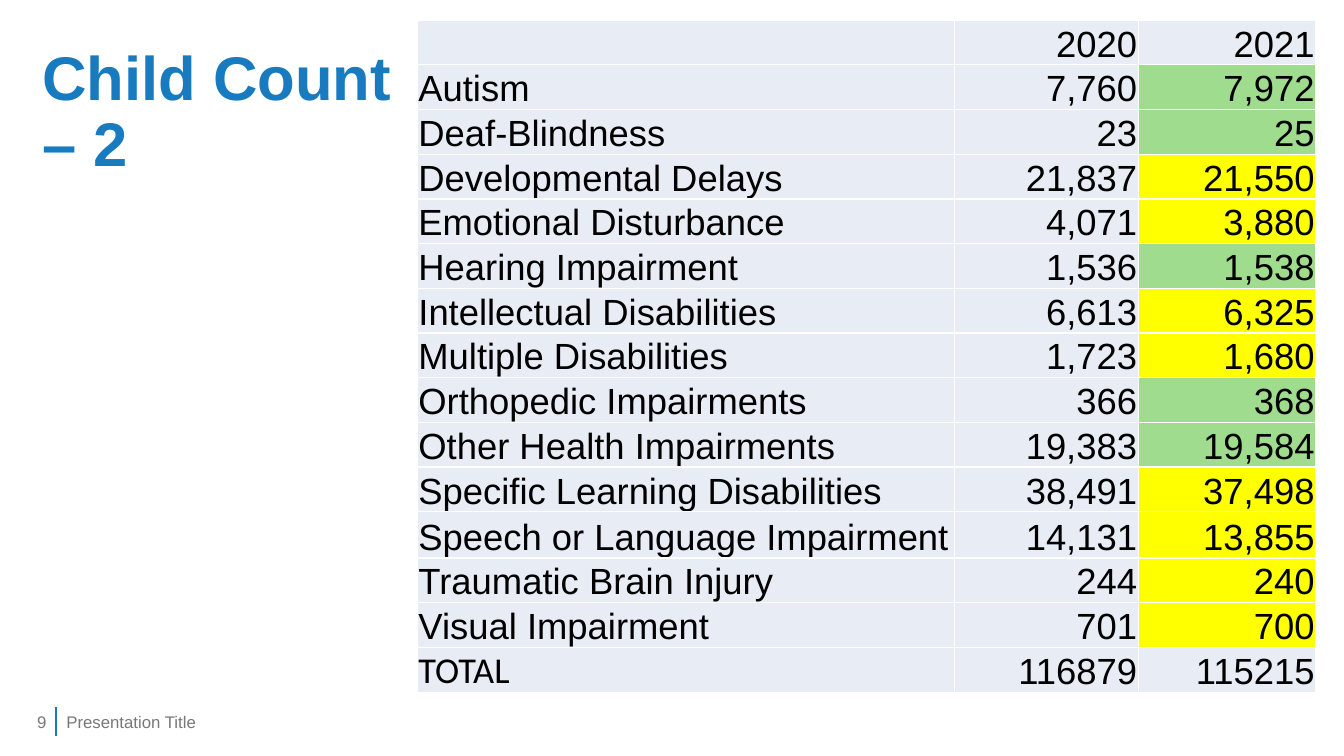
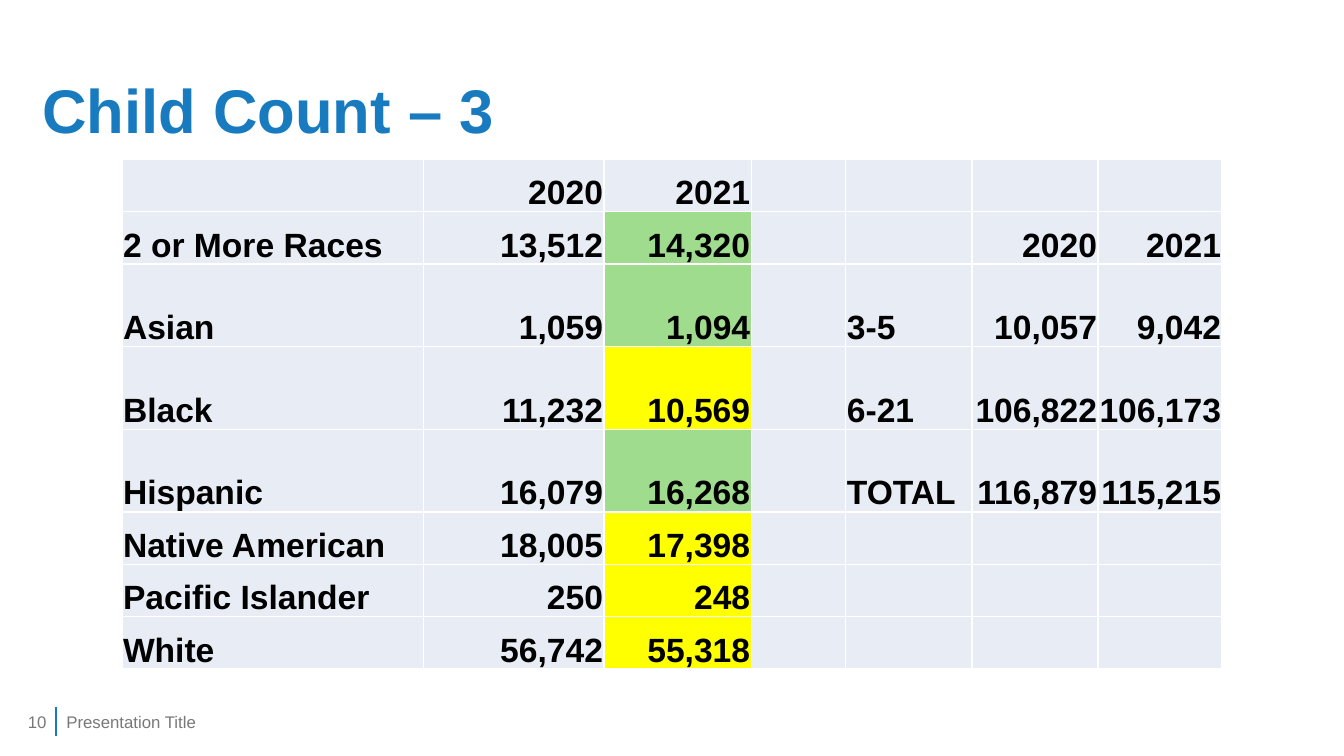
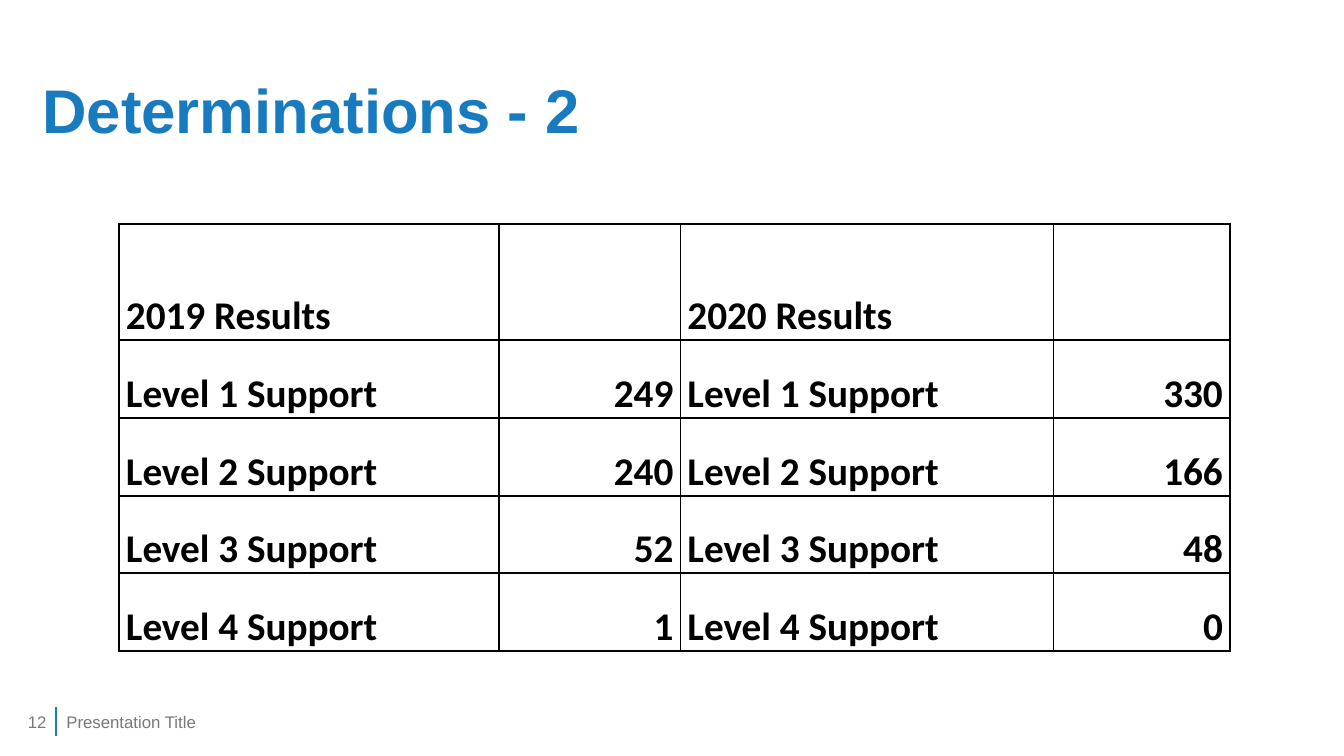
from itertools import product

from lxml import etree
from pptx import Presentation
from pptx.dml.color import RGBColor
from pptx.enum.shapes import MSO_CONNECTOR
from pptx.enum.text import MSO_ANCHOR, PP_ALIGN
from pptx.oxml.ns import qn
from pptx.util import Inches, Pt

STRAIGHT = MSO_CONNECTOR.STRAIGHT
MIDDLE, BOTTOM = MSO_ANCHOR.MIDDLE, MSO_ANCHOR.BOTTOM
LEFT, RIGHT = PP_ALIGN.LEFT, PP_ALIGN.RIGHT

WIDTH, HEIGHT = Inches(13.33), Inches(7.5)
BLUE, GREY, BLACK, WHITE = "187BC0", "787878", "000000", "FFFFFF"
PALE, RISE, FALL = "E8ECF4", "A0DC8D", "FFFF00"

TITLE_FONT = {"name": "Arial", "size": Pt(44), "bold": True, "color": BLUE}
FOOTER_FONT = {"name": "Arial", "size": Pt(12), "color": GREY}

# Boxes: left, top, width, height in percent of the slide
TITLE_BOX = (2.4, 5.33, 95.2, 19.33)
FOOTER_BOX = (4.2, 92.8, 48.91, 5.33)
NUMBER_BOX = (0, 92.8, 4.2, 5.33)
RULE_BOX = (4.2, 93.47, 0, 3.86)

COUNT_LOOK = {"fill": PALE, "border": WHITE, "border_width": Pt(1),
              "insets": (0.01, 0.01, 0.01, 0)}
COUNT_FONT = {"name": "Arial", "size": Pt(26), "bold": False, "color": BLACK}
RACE_FONT = {**COUNT_FONT, "size": Pt(24), "bold": True}
RESULT_LOOK = {"fill": WHITE, "border": BLACK, "border_width": Pt(1.5),
               "insets": (0.07, 0, 0.07, 0)}
RESULT_FONT = {"name": "Calibri", "size": Pt(28), "bold": True, "color": BLACK}

DISABILITIES = [
    ("", "2020", "2021"),
    ("Autism", "7,760", "7,972"),
    ("Deaf-Blindness", "23", "25"),
    ("Developmental Delays", "21,837", "21,550"),
    ("Emotional Disturbance", "4,071", "3,880"),
    ("Hearing Impairment", "1,536", "1,538"),
    ("Intellectual Disabilities", "6,613", "6,325"),
    ("Multiple Disabilities", "1,723", "1,680"),
    ("Orthopedic Impairments", "366", "368"),
    ("Other Health Impairments", "19,383", "19,584"),
    ("Specific Learning Disabilities", "38,491", "37,498"),
    ("Speech or Language Impairment", "14,131", "13,855"),
    ("Traumatic Brain Injury", "244", "240"),
    ("Visual Impairment", "701", "700"),
    ("TOTAL", "116879", "115215"),
]
RACES_AND_AGES = [
    ("", "2020", "2021", "", "", "", ""),
    ("2 or More Races", "13,512", "14,320", "", "", "2020", "2021"),
    ("Asian", "1,059", "1,094", "", "3-5", "10,057", "9,042"),
    ("Black", "11,232", "10,569", "", "6-21", "106,822", "106,173"),
    ("Hispanic", "16,079", "16,268", "", "TOTAL", "116,879", "115,215"),
    ("Native American", "18,005", "17,398", "", "", "", ""),
    ("Pacific Islander", "250", "248", "", "", "", ""),
    ("White", "56,742", "55,318", "", "", "", ""),
]
SUPPORT_COUNTS = [("249", "330"), ("240", "166"), ("52", "48"), ("1", "0")]
DETERMINATIONS = [("2019 Results", "", "2020 Results", "")] + [
    (f"Level {level} Support", before, f"Level {level} Support", after)
    for level, (before, after) in enumerate(SUPPORT_COUNTS, 1)
]


def rgb(code):
    return RGBColor.from_string(code)


def place(box):
    left, top, width, height = box
    return [int(WIDTH * left / 100), int(HEIGHT * top / 100),
            int(WIDTH * width / 100), int(HEIGHT * height / 100)]


def set_font(font, style):
    for key, value in style.items():
        if key == "color":
            font.color.rgb = rgb(value)
        else:
            setattr(font, key, value)


def write(frame, words, style, align=LEFT):
    frame.text = words
    paragraph = frame.paragraphs[0]
    paragraph.alignment = align
    for run in paragraph.runs:
        set_font(run.font, style)
    return paragraph


def number(words):
    digits = words.replace(",", "")
    return int(digits) if digits.isdigit() else None


def change_fill(row):
    """Green when 2021 is above 2020, yellow when below."""
    return RISE if number(row[2]) > number(row[1]) else FALL


def add_borders(cell, color, width):
    properties = cell._tc.get_or_add_tcPr()
    for side in ("a:lnL", "a:lnR", "a:lnT", "a:lnB"):
        line = etree.SubElement(properties, qn(side), w=str(width))
        fill = etree.SubElement(line, qn("a:solidFill"))
        etree.SubElement(fill, qn("a:srgbClr"), val=color)


def format_cell(cell, words, look, font, fill):
    sides = ("margin_left", "margin_top", "margin_right", "margin_bottom")
    for side, inset in zip(sides, look["insets"]):
        setattr(cell, side, Inches(inset))
    cell.vertical_anchor = BOTTOM
    add_borders(cell, look["border"], look["border_width"])
    cell.fill.solid()
    cell.fill.fore_color.rgb = rgb(fill)
    if words:
        write(cell.text_frame, words, font,
              LEFT if number(words) is None else RIGHT)


def add_data_table(slide, box, rows, columns, heights, look, font,
                   changes=False, total_font="Arial"):
    left, top, width, height = place(box)
    table = slide.shapes.add_table(len(rows), len(columns),
                                   left, top, width, height).table
    table.first_row = table.horz_banding = False
    for column, share in zip(table.columns, columns):
        column.width = int(width * share / sum(columns))
    for row, share in zip(table.rows, heights):
        row.height = int(height * share / sum(heights))

    for r, c in product(range(len(rows)), range(len(columns))):
        row = rows[r]
        changed = changes and c == 2 and r > 0 and row[0] != "TOTAL"
        fill = change_fill(row) if changed else look["fill"]
        is_total = c == 0 and row[0] == "TOTAL"
        style = {**font, "name": total_font} if is_total else font
        format_cell(table.cell(r, c), row[c], look, style, fill)


def add_footer(slide, page):
    # Rule between the page number and the presentation name
    left, top, width, height = place(RULE_BOX)
    rule = slide.shapes.add_connector(STRAIGHT, left, top,
                                      left + width, top + height)
    rule.line.color.rgb = rgb(BLUE)
    rule.line.width = Pt(1.5)
    etree.SubElement(rule._element.spPr, qn("a:effectLst"))

    for box, words, align in ((FOOTER_BOX, "Presentation Title", LEFT),
                              (NUMBER_BOX, str(page), RIGHT)):
        frame = slide.shapes.add_textbox(*place(box)).text_frame
        frame.word_wrap = True
        frame.vertical_anchor = MIDDLE
        write(frame, words, FOOTER_FONT, align)


def add_titled_slide(deck, heading, page):
    slide = deck.slides.add_slide(deck.slide_layouts[5])
    title = slide.shapes.title
    title.left, title.top, title.width, title.height = place(TITLE_BOX)
    title.text_frame.word_wrap = True
    title.text_frame.vertical_anchor = MIDDLE
    write(title.text_frame, heading, TITLE_FONT).line_spacing = 0.9
    add_footer(slide, page)
    return slide


def main():
    deck = Presentation()
    deck.slide_width, deck.slide_height = WIDTH, HEIGHT

    # Count by disability
    slide = add_titled_slide(deck, "Child Count \v– 2", 9)
    add_data_table(slide, (31.06, 2.67, 66.84, 88.2), DISABILITIES,
                   (5.33, 1.82, 1.76), [0.44] * 11 + [0.46] + [0.44] * 3,
                   COUNT_LOOK, COUNT_FONT, changes=True, total_font="Calibri")

    # Count by race and by age
    slide = add_titled_slide(deck, "Child Count – 3", 10)
    add_data_table(slide, (9.08, 21.07, 81.85, 67.47), RACES_AND_AGES,
                   (2.99, 1.79, 1.46, 0.94, 1.25, 1.25, 1.23),
                   [0.52] * 2 + [0.82] * 3 + [0.52] * 3,
                   COUNT_LOOK, RACE_FONT, changes=True)

    # Support levels
    slide = add_titled_slide(deck, "Determinations - 2", 12)
    add_data_table(slide, (8.85, 29.6, 82.67, 56.53), DETERMINATIONS,
                   (3.77, 1.8, 3.7, 1.75), [1.5] + [1] * 4,
                   RESULT_LOOK, RESULT_FONT)

    deck.save("out.pptx")


if __name__ == "__main__":
    main()
